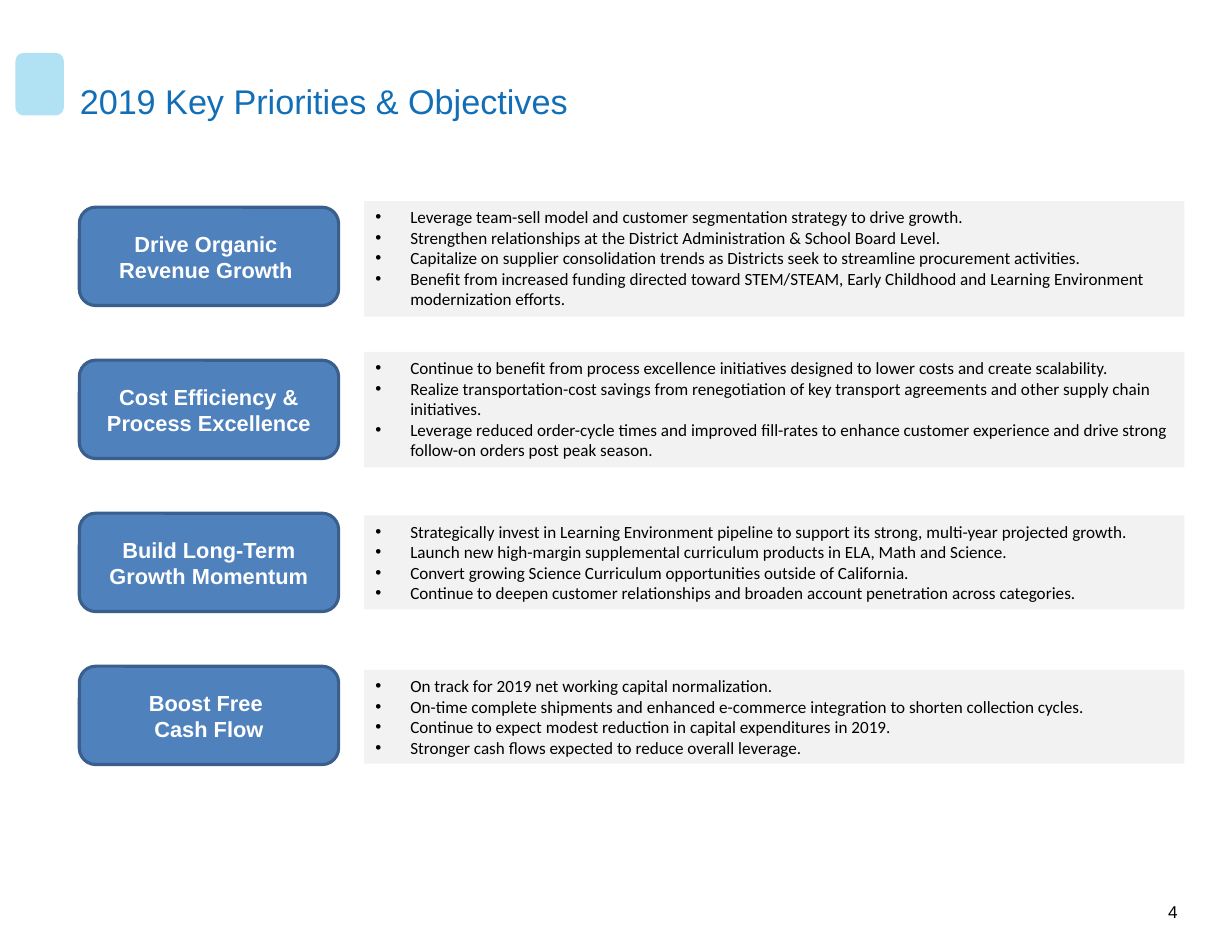
"""Build the 2019 key priorities and objectives slide."""
from dataclasses import dataclass

from lxml import etree
from pptx import Presentation
from pptx import util as u
from pptx.dml.color import RGBColor
from pptx.enum import shapes, text
from pptx.oxml import ns

SKY = RGBColor(0xB1, 0xE2, 0xF4)
TITLE_BLUE = RGBColor(0x12, 0x6F, 0xB7)
CARD_BLUE = RGBColor(0x4F, 0x81, 0xBD)
CARD_EDGE = RGBColor(0x3A, 0x5F, 0x8C)
PANEL_GREY = RGBColor(0xF2, 0xF2, 0xF2)
WHITE = RGBColor(0xFF, 0xFF, 0xFF)
BLACK = RGBColor(0, 0, 0)

CARD_TOP, CARD_STEP = 4.7, 3.47
COMPARISON_LAYOUT = 4


@dataclass
class Priority:
    heading: list[str]
    top: float
    height: float
    goals: list[str]


PRIORITIES = [
    Priority(["Drive Organic ", "Revenue Growth "], 4.56, 2.62, [
        "Leverage team-sell model and customer segmentation strategy to drive growth.",
        "Strengthen relationships at the District Administration & School Board Level.",
        "Capitalize on supplier consolidation trends as Districts seek to streamline "
        "procurement activities.",
        "Benefit from increased funding directed toward STEM/STEAM, Early Childhood and "
        "Learning Environment modernization efforts.",
    ]),
    Priority(["Cost Efficiency & Process Excellence"], 7.98, 2.62, [
        "Continue to benefit from process excellence initiatives designed to lower costs "
        "and create scalability.",
        "Realize transportation-cost savings from renegotiation of key transport "
        "agreements and other supply chain initiatives.",
        "Leverage reduced order-cycle times and improved fill-rates to enhance customer "
        "experience and drive strong follow-on orders post peak season.",
    ]),
    Priority(["Build Long-Term Growth Momentum"], 11.69, 2.13, [
        "Strategically invest in Learning Environment pipeline to support its strong, "
        "multi-year projected growth.",
        "Launch new high-margin supplemental curriculum products in ELA, Math and Science.",
        "Convert growing Science Curriculum opportunities outside of California.",
        "Continue to deepen customer relationships and broaden account penetration "
        "across categories.",
    ]),
    Priority(["Boost Free ", "Cash Flow"], 15.19, 2.13, [
        "On track for 2019 net working capital normalization.",
        "On-time complete shipments and enhanced e-commerce integration to shorten "
        "collection cycles.",
        "Continue to expect modest reduction in capital expenditures in 2019.",
        "Stronger cash flows expected to reduce overall leverage.",
    ]),
]


def place(sp, left: float, top: float, width: float, height: float) -> None:
    sp.left, sp.top = u.Cm(left), u.Cm(top)
    sp.width, sp.height = u.Cm(width), u.Cm(height)


def add_bullet(p) -> None:
    pPr = p._p.get_or_add_pPr()
    pPr.set("marL", str(u.Cm(0.79)))
    pPr.set("indent", str(-u.Cm(0.79)))
    etree.SubElement(pPr, ns.qn("a:buFont"), typeface="Arial")
    etree.SubElement(pPr, ns.qn("a:buChar"), char="•")


def write(sp, lines: list[str], *, size: float, color: RGBColor, font: str = "Arial",
          bold: bool = False, align=text.PP_ALIGN.LEFT, anchor=text.MSO_ANCHOR.TOP,
          inset: float | None = None, spacing: float = 1.0,
          bullets: bool = False) -> None:
    tf = sp.text_frame
    tf.word_wrap, tf.vertical_anchor = True, anchor
    tf.auto_size = text.MSO_AUTO_SIZE.NONE
    if inset is not None:
        tf.margin_left = tf.margin_right = u.Cm(inset)
        tf.margin_top = tf.margin_bottom = u.Cm(inset)
    for i, line in enumerate(lines):
        p = tf.add_paragraph() if i else tf.paragraphs[0]
        p.alignment, p.line_spacing = align, spacing
        p.space_before = p.space_after = u.Pt(0)
        if bullets:
            add_bullet(p)
        r = p.add_run()
        r.text = line
        r.font.name, r.font.size, r.font.bold = font, u.Pt(size), bold
        r.font.color.rgb = color


def add_round_box(s, left: float, top: float, width: float, height: float,
                  fill: RGBColor, edge: RGBColor | None = None):
    sp = s.shapes.add_shape(shapes.MSO_SHAPE.ROUNDED_RECTANGLE, u.Cm(left), u.Cm(top),
                            u.Cm(width), u.Cm(height))
    sp.shadow.inherit = False
    sp.fill.solid()
    sp.fill.fore_color.rgb = fill
    if edge is None:
        sp.line.fill.background()
    else:
        sp.line.color.rgb = edge
        sp.line.width = u.Pt(2)
    return sp


def add_priority(s, body, priority: Priority, card_top: float) -> None:
    card = add_round_box(s, 1.8, card_top, 5.88, 2.23, CARD_BLUE, CARD_EDGE)
    write(card, priority.heading, size=14, color=WHITE, bold=True,
          align=text.PP_ALIGN.CENTER, anchor=text.MSO_ANCHOR.MIDDLE)
    place(body, 8.26, priority.top, 18.6, priority.height)
    body.fill.solid()
    body.fill.fore_color.rgb = PANEL_GREY
    write(body, priority.goals, size=11, color=BLACK, font="Calibri", bullets=True)


def main() -> None:
    prs = Presentation()
    prs.slide_width, prs.slide_height = u.Cm(27.94), u.Cm(21.59)
    s = prs.slides.add_slide(prs.slide_layouts[COMPARISON_LAYOUT])
    title, *bodies = s.placeholders

    add_round_box(s, 0.35, 1.2, 1.1, 1.42, SKY)
    place(title, 1.56, 1.57, 24.82, 1.02)
    write(title, ["2019 Key Priorities & Objectives"], size=22, color=TITLE_BLUE,
          inset=0.25)
    for i, (body, priority) in enumerate(zip(bodies, PRIORITIES)):
        add_priority(s, body, priority, CARD_TOP + i * CARD_STEP)

    number = s.shapes.add_textbox(u.Cm(26.49), u.Cm(20.36), u.Cm(0.5), u.Cm(0.5))
    write(number, ["4"], size=11, color=BLACK, inset=0, spacing=1.2)
    prs.save("out.pptx")


if __name__ == "__main__":
    main()
